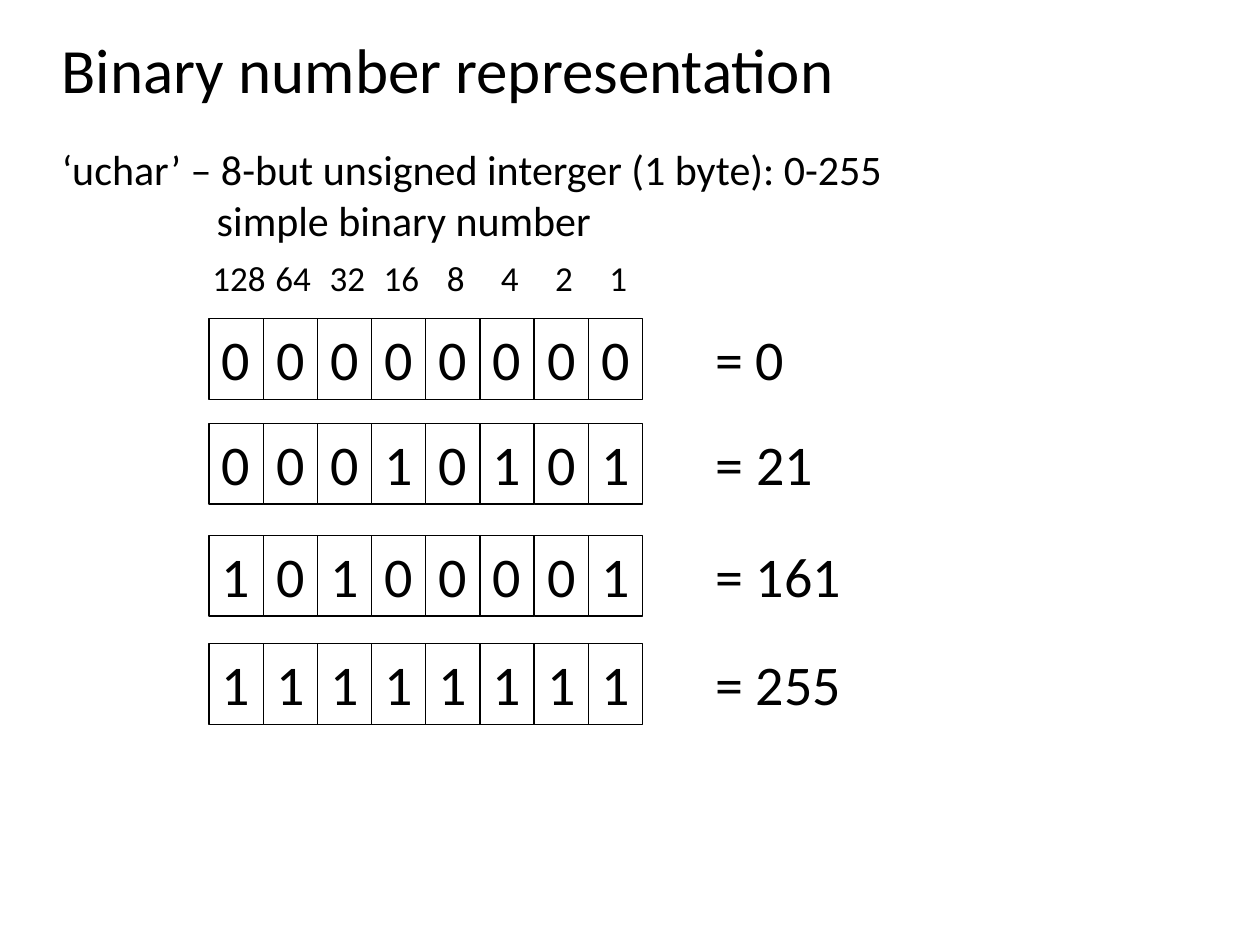
from pptx import Presentation
from pptx.dml.color import RGBColor
from pptx.enum.shapes import MSO_SHAPE as Shape
from pptx.enum.text import MSO_ANCHOR as Anchor, MSO_AUTO_SIZE as Fit, PP_ALIGN as Align
from pptx.oxml.ns import qn
from pptx.util import Inches, Pt

BITS = 8
LEFT, COL = 1.66, 0.43  # first bit column and column width, inches
ROW = 0.64
TOPS = {0: 2.53, 21: 3.36, 161: 4.25, 255: 5.11}  # number: top of its row


def color(text):
    return RGBColor.from_string(text)


class Deck:
    """Holds the style and the current slide."""
    font = "Calibri"
    ink = "000000"

    def __init__(self, width, height):
        self.prs = Presentation()
        self.prs.slide_width, self.prs.slide_height = Inches(width), Inches(height)
        self.slide = self.prs.slides.add_slide(self.prs.slide_layouts[1])

    def fill_text(self, shape, text, size, align=Align.LEFT, **frame):
        """Set the text of a shape, its frame values and its font; return the paragraph."""
        box = shape.text_frame
        box.text = text
        for key, value in frame.items():
            setattr(box, key, value)
        para = box.paragraphs[0]
        para.alignment, para.space_before = align, Pt(0)
        look = {"name": self.font, "size": Pt(size), "bold": False}
        for run in para.runs:
            for key, value in look.items():
                setattr(run.font, key, value)
            run.font.color.rgb = color(self.ink)
        return para

    def place(self, shape, left, top, width, height):
        spot = {"left": left, "top": top, "width": width, "height": height}
        for key, value in spot.items():
            setattr(shape, key, Inches(value))

    def title(self, text, *spot):
        shape = self.slide.shapes.title
        self.place(shape, *spot)
        self.fill_text(shape, text, 36, vertical_anchor=Anchor.MIDDLE)

    def body(self, text, hang, *spot):
        """Fill the body with plain text whose later lines start at hang inches."""
        shape = self.slide.placeholders[1]
        self.place(shape, *spot)
        para = self.fill_text(shape, text, 24)
        props = para._p.get_or_add_pPr()
        props.set("marL", str(Inches(hang)))
        props.set("indent", str(-Inches(hang)))
        props.append(props.makeelement(qn("a:buNone"), {}))

    def cell(self, col, top, text):
        shape = self.slide.shapes.add_shape(
            Shape.RECTANGLE, Inches(LEFT + col * COL), Inches(top), Inches(COL), Inches(ROW))
        shape.shadow.inherit = False
        shape.fill.background()
        shape.line.color.rgb = color(self.ink)
        shape.line.width = Pt(0.75)
        self.fill_text(shape, text, 32, Align.CENTER, word_wrap=False,
                       auto_size=Fit.SHAPE_TO_FIT_TEXT, vertical_anchor=Anchor.TOP)

    def label(self, left, top, width, height, text, size, align=Align.LEFT):
        shape = self.slide.shapes.add_textbox(*map(Inches, (left, top, width, height)))
        self.fill_text(shape, text, size, align, word_wrap=False,
                       auto_size=Fit.SHAPE_TO_FIT_TEXT)


def main():
    deck = Deck(10, 7.5)
    deck.title("Binary number representation", 0.39, 0.23, 9.22, 0.63)
    deck.body("‘uchar’ – 8-but unsigned interger (1 byte): 0-255\v"
              "simple binary number", 1.23, 0.39, 1.09, 9.22, 5.57)

    for col in range(BITS):
        weight = str(2 ** (BITS - 1 - col))
        width = 0.2 + 0.14 * len(weight)
        mid = LEFT + (col + 0.55) * COL
        deck.label(mid - width / 2, 1.99, width, 0.44, weight, 20, Align.CENTER)

    for number, top in TOPS.items():
        for col, bit in enumerate(f"{number:0{BITS}b}"):
            deck.cell(col, top, bit)
        text = f"= {number}"
        deck.label(5.58, top, 0.1 + 0.22 * len(text), ROW, text, 32)

    deck.prs.save("out.pptx")


if __name__ == "__main__":
    main()
